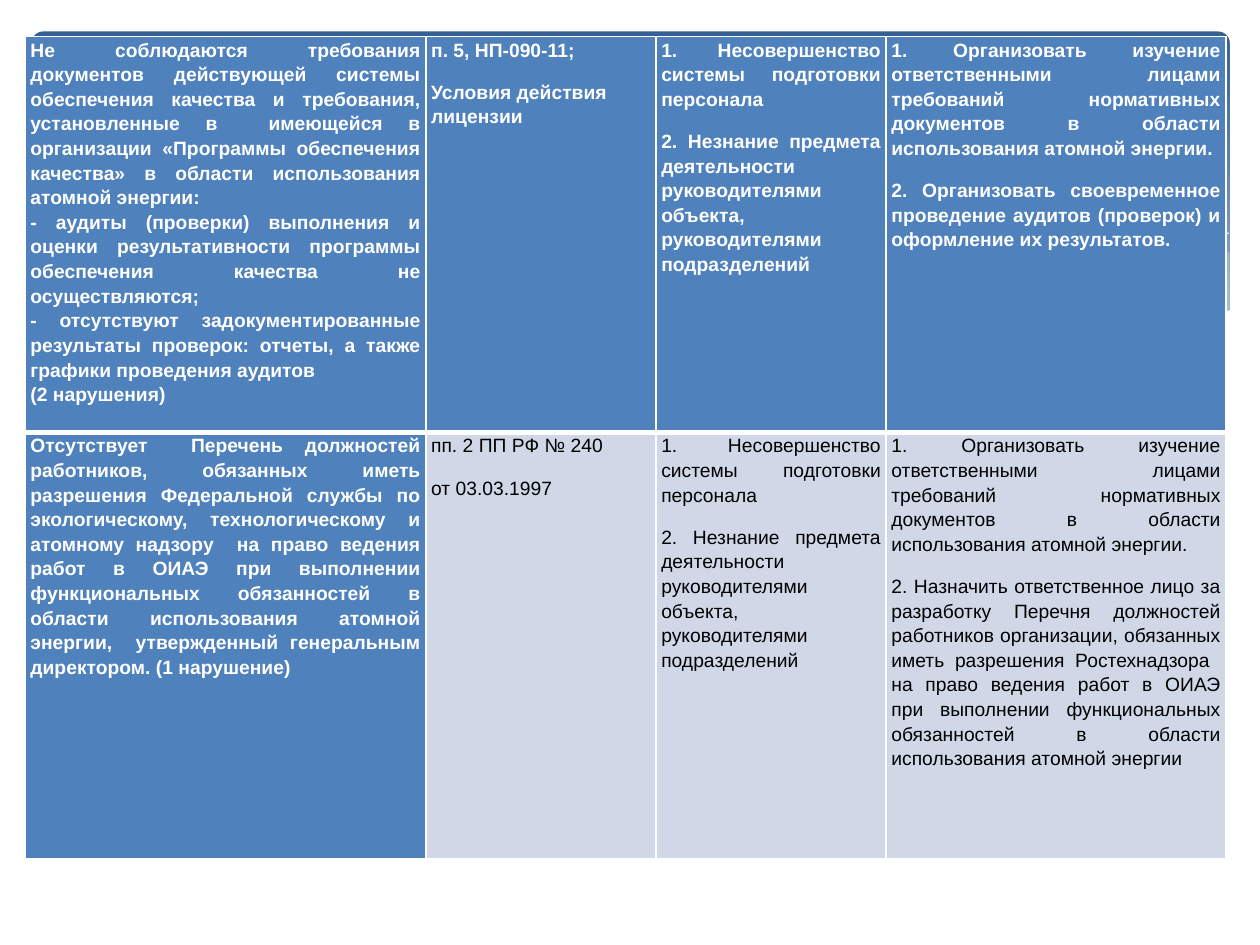
import pptx
import pptx.dml.color
import pptx.enum.shapes
import pptx.enum.text
import pptx.oxml
import pptx.util
from lxml import etree
from pptx.oxml.ns import qn

Pt = pptx.util.Pt
RGBColor = pptx.dml.color.RGBColor
ALIGN = pptx.enum.text.PP_ALIGN

WHITE = RGBColor(0xFF, 0xFF, 0xFF)
BLACK = RGBColor(0, 0, 0)
BLUE = RGBColor(0x4F, 0x81, 0xBD)
PALE = RGBColor(0xD0, 0xD8, 0xE8)
NAVY = RGBColor(0x37, 0x60, 0x92)
SKY = RGBColor(0x95, 0xB3, 0xD7)
CREAM = RGBColor(0xEE, 0xEC, 0xE1)

# Table content: rows of cells, each cell a list of paragraphs
CAUSES = [
    "1. Несовершенство системы подготовки персонала",
    "2. Незнание предмета деятельности руководителями объекта, руководителями подразделений",
]
STUDY = ("1. Организовать изучение ответственными лицами требований нормативных "
         "документов в области использования атомной энергии.")
ROWS = [
    [
        ["Не соблюдаются требования документов действующей системы обеспечения качества "
         "и требования, установленные в  имеющейся в организации «Программы обеспечения "
         "качества» в области использования атомной энергии:",
         "- аудиты (проверки) выполнения и оценки результативности программы обеспечения "
         "качества не осуществляются;",
         "- отсутствуют задокументированные результаты проверок: отчеты, а также графики "
         "проведения аудитов",
         "(2 нарушения)"],
        ["п. 5, НП-090-11;", "Условия действия лицензии"],
        CAUSES,
        [STUDY,
         "2. Организовать своевременное проведение аудитов (проверок) и оформление их "
         "результатов."],
    ],
    [
        ["Отсутствует  Перечень должностей работников, обязанных иметь разрешения "
         "Федеральной службы по экологическому, технологическому и атомному надзору  на "
         "право ведения работ в ОИАЭ при выполнении функциональных обязанностей в области "
         "использования атомной энергии,  утвержденный генеральным директором. "
         "(1 нарушение)"],
        ["пп. 2 ПП РФ № 240", "от 03.03.1997"],
        CAUSES,
        [STUDY,
         "2. Назначить ответственное лицо за разработку Перечня должностей работников "
         "организации, обязанных иметь разрешения Ростехнадзора  на право ведения работ в "
         "ОИАЭ при выполнении функциональных обязанностей в области использования атомной "
         "энергии"],
    ],
]
COL_WIDTHS = [229, 131.5, 131.5, 194.2]
ROW_HEIGHTS = [226.2, 243.4]
TABLE_LEFT, TABLE_TOP = 14.4, 20.9

# Background waves: points, fill, opacity in percent (no fill means a hairline)
WAVES = [
    ([(702, 144), (673, 149), (641.5, 155.5), (599, 165.6), (542, 178.6), (476, 190.8),
      (518, 195.8), (554, 198.7), (586, 200.2), (615, 198.7), (640, 195.8), (668, 189.4),
      (683, 185), (702.7, 177.8), (702.7, 144)], CREAM, 29),
    ([(643, 196.6), (602.6, 190.8), (558, 183), (508, 172.8), (453, 159.8), (410, 149.8),
      (370, 142.6), (335, 137.5), (302, 134.6), (260, 133.2), (236, 134.6), (206, 137.5),
      (246, 143.3), (291, 152), (323, 159.8), (381.6, 172.8), (433, 183.6), (479, 191.5),
      (520, 197.3), (557, 199.4), (589, 200.2), (617, 199.4)], CREAM, 40),
    ([(222.5, 140.4), (254, 136), (299.5, 134.6), (352, 136.8), (400, 141.8), (458, 149.8),
      (523, 162.7), (572, 173.5), (626, 188), (653, 195.8)], None, 100),
    ([(441.4, 185), (484, 173.5), (538.6, 160.6), (602, 147), (644, 139.7), (675, 135.4),
      (702, 133.2)], None, 100),
    ([(703.4, 177), (684, 184.3), (662, 190.8), (630, 196.6), (582.5, 199.4),
      (535.7, 197.3), (481, 190.8), (417, 180), (362, 167.8), (322, 158.4), (263, 145.4),
      (210, 136.8), (165.6, 133.2), (127, 132.5), (85.7, 134.6), (54.7, 140.4),
      (28.8, 147.6), (16.6, 153.4), (16.6, 237), (703.4, 237)], WHITE, 100),
]


def add_band(slide):
    sp = slide.shapes.add_shape(pptx.enum.shapes.MSO_SHAPE.ROUNDED_RECTANGLE,
                                Pt(18), Pt(18), Pt(684.7), Pt(194.4))
    sp.adjustments[0] = 0.034
    sp.shadow.inherit = False
    sp.line.fill.background()
    sp.fill.gradient()
    sp.fill.gradient_angle = 270
    for stop, color, position in zip(sp.fill.gradient_stops, (NAVY, SKY), (0, 0.9)):
        stop.color.rgb = color
        stop.position = position


def add_wave(slide, points, color, opacity):
    corners = [(Pt(x), Pt(y)) for x, y in points]
    builder = slide.shapes.build_freeform(*corners[0], scale=1.0)
    builder.add_line_segments(corners[1:], close=color is not None)
    sp = builder.convert_to_shape()
    sp.shadow.inherit = False
    if color is None:
        sp.fill.background()
        sp.line.color.rgb = WHITE
        sp.line.width = Pt(0)
        return
    sp.line.fill.background()
    sp.fill.solid()
    sp.fill.fore_color.rgb = color
    if opacity < 100:
        clr = sp.fill._xPr.find(qn("a:solidFill"))[0]
        etree.SubElement(clr, qn("a:alpha")).set("val", str(opacity * 1000))


def set_borders(cell, widths):
    tc_pr = cell._tc.get_or_add_tcPr()
    for i, (side, width) in enumerate(zip("LRTB", widths)):
        ln = etree.Element(qn("a:ln" + side), w=str(Pt(width)))
        fill = etree.SubElement(ln, qn("a:solidFill"))
        etree.SubElement(fill, qn("a:srgbClr")).set("val", str(WHITE))
        tc_pr.insert(i, ln)


def fill_cell(cell, paragraphs, row, col):
    strong = row == 0 or col == 0
    cell.margin_left = cell.margin_right = Pt(3)
    cell.margin_top = cell.margin_bottom = Pt(0)
    cell.fill.solid()
    cell.fill.fore_color.rgb = BLUE if strong else PALE
    set_borders(cell, (1, 1, 1, 3) if row == 0 else (1, 1, 3, 1))
    tf = cell.text_frame
    tf.text = "\n".join(paragraphs)
    for p in tf.paragraphs:
        p.alignment = ALIGN.LEFT if col == 1 else ALIGN.JUSTIFY
        p.line_spacing = 1.15
        p.space_after = Pt(0 if row == col == 0 else 10)
        for r in p.runs:
            r.font.name = "Arial"
            r.font.size = Pt(11)
            r.font.bold = strong
            r.font.color.rgb = WHITE if strong else BLACK


def add_findings_table(slide):
    table = slide.shapes.add_table(len(ROWS), len(COL_WIDTHS), Pt(TABLE_LEFT), Pt(TABLE_TOP),
                                   Pt(sum(COL_WIDTHS)), Pt(sum(ROW_HEIGHTS))).table
    for column, width in zip(table.columns, COL_WIDTHS):
        column.width = Pt(width)
    for row, height in zip(table.rows, ROW_HEIGHTS):
        row.height = Pt(height)
    for i, cells in enumerate(ROWS):
        for j, paragraphs in enumerate(cells):
            fill_cell(table.cell(i, j), paragraphs, i, j)


def main():
    prs = pptx.Presentation()
    prs.slide_width, prs.slide_height = Pt(720), Pt(540)
    s = prs.slides.add_slide(prs.slide_layouts[6])
    add_band(s)
    for wave in WAVES:
        add_wave(s, *wave)
    add_findings_table(s)
    prs.save("out.pptx")


if __name__ == "__main__":
    main()
